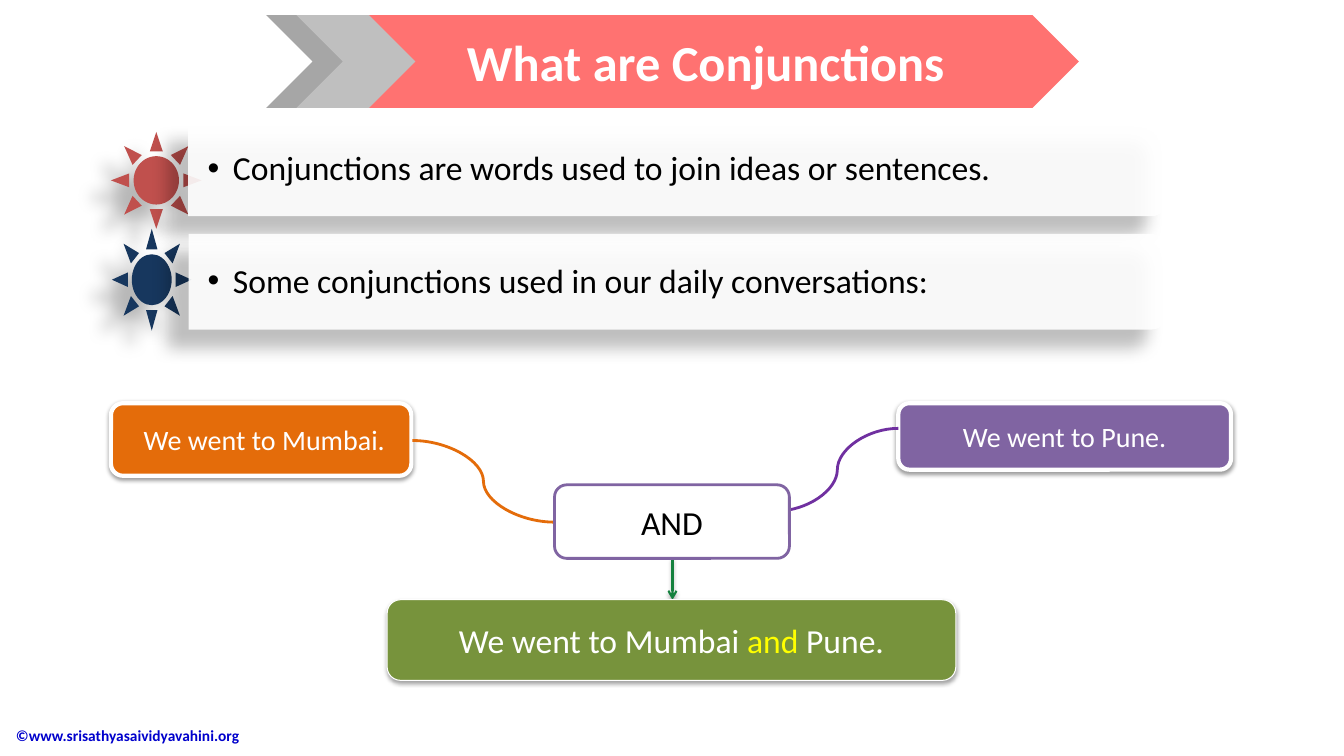
"""Build a slide explaining conjunctions with a joined-sentence diagram."""
from lxml import etree
from pptx import Presentation
from pptx.dml.color import RGBColor
from pptx.enum.shapes import MSO_CONNECTOR, MSO_SHAPE
from pptx.enum.text import MSO_ANCHOR, PP_ALIGN
from pptx.oxml.ns import qn
from pptx.util import Inches, Pt

ROUNDED = MSO_SHAPE.ROUNDED_RECTANGLE
PANEL = MSO_SHAPE.ROUND_2_SAME_RECTANGLE
SUN = MSO_SHAPE.SUN
CHEVRON = MSO_SHAPE.CHEVRON
PENTAGON = MSO_SHAPE.PENTAGON
CURVE = MSO_CONNECTOR.CURVE
STRAIGHT = MSO_CONNECTOR.STRAIGHT
CENTER = PP_ALIGN.CENTER
LEFT = PP_ALIGN.LEFT
MIDDLE = MSO_ANCHOR.MIDDLE

FONT = "Calibri"
COLORS = {
    "white": "FFFFFF", "black": "000000", "yellow": "FFFF00", "link": "0000CC",
    "orange": "E46C0A", "purple": "8064A2", "violet": "7030A0",
    "green": "77933C", "arrow": "15813E", "red": "C0504D", "navy": "17375E",
    "dark_gray": "A6A6A6", "light_gray": "BFBFBF", "coral": "FF7271",
}
CARD_SHADOW = (38, 3.1, 1.6, 90)
RESULT_SHADOW = (35, 3.1, 1.8, 90)
DEEP_SHADOW = (28, 11.8, 19.7, 141)


def rgb(name):
    """Return the named colour."""
    return RGBColor.from_string(COLORS[name])


def set_alpha(color_element, percent):
    """Give a colour element an opacity."""
    etree.SubElement(color_element, qn("a:alpha"), val=str(percent * 1000))


def add_shadow(effects, shadow):
    """Add an outer shadow of opacity, blur, distance and angle."""
    opacity, blur, distance, angle = shadow
    outer = etree.SubElement(
        effects, qn("a:outerShdw"), blurRad=str(int(Pt(blur))),
        dist=str(int(Pt(distance))), dir=str(angle * 60000), rotWithShape="0")
    color = etree.SubElement(outer, qn("a:srgbClr"), val=COLORS["black"])
    set_alpha(color, opacity)


def write_text(shape, text, size=24, color="black", bold=False, align=CENTER,
               bullet=False, highlight=None):
    """Write one paragraph, colouring the highlighted word if given."""
    frame = shape.text_frame
    frame.word_wrap = True
    frame.vertical_anchor = MIDDLE
    paragraph = frame.paragraphs[0]
    paragraph.alignment = align
    if bullet:
        frame.margin_left = Inches(0.19)
        frame.margin_right = frame.margin_top = frame.margin_bottom = Inches(0.02)
        paragraph.line_spacing = 0.9
        paragraph.space_after = Pt(3.6)
        properties = paragraph._p.get_or_add_pPr()
        properties.set("marL", str(Inches(0.25)))
        properties.set("indent", str(-Inches(0.25)))
        etree.SubElement(properties, qn("a:buFont"), typeface="Arial")
        etree.SubElement(properties, qn("a:buChar"), char="•")
    paragraph.font.size = Pt(size)
    pieces = [text]
    if highlight:
        before, word, after = text.partition(highlight)
        pieces = [before, word, after]
    for piece in pieces:
        run = paragraph.add_run()
        run.text = piece
        run.font.name = FONT
        run.font.size = Pt(size)
        run.font.bold = bold
        run.font.color.rgb = rgb("yellow" if piece == highlight else color)


def add_block(slide, kind, box, fill, line=None, line_width=0, shadow=None,
              rotation=0, opacity=None):
    """Add a filled preset shape."""
    shape = slide.shapes.add_shape(kind, *map(Inches, box))
    shape.shadow.inherit = False
    shape.rotation = rotation
    shape.fill.solid()
    shape.fill.fore_color.rgb = rgb(fill)
    properties = shape._element.spPr
    if opacity:
        set_alpha(properties.find(qn("a:solidFill"))[0], opacity)
    if line:
        shape.line.color.rgb = rgb(line)
        shape.line.width = Pt(line_width)
    else:
        shape.line.fill.background()
    if shadow:
        add_shadow(properties.find(qn("a:effectLst")), shadow)
    return shape


def add_link(slide, kind, start, end, color, width, arrow=False, shadow=None):
    """Add a connector, with an optional arrowhead and shadow."""
    link = slide.shapes.add_connector(kind, *map(Inches, start + end))
    link.line.color.rgb = rgb(color)
    link.line.width = Pt(width)
    if arrow:
        etree.SubElement(link.line._get_or_add_ln(), qn("a:tailEnd"), type="arrow")
    effects = etree.SubElement(link._element.spPr, qn("a:effectLst"))
    if shadow:
        add_shadow(effects, shadow)


def add_text(slide, box, text, **text_format):
    """Add a text box."""
    write_text(slide.shapes.add_textbox(*map(Inches, box)), text, **text_format)


def add_point(slide, sun_box, sun_color, panel_box, text_box, text):
    """Add a sun marker with its panel and bulleted sentence."""
    add_block(slide, SUN, sun_box, sun_color, shadow=DEEP_SHADOW, rotation=90)
    add_block(slide, PANEL, panel_box, "white", shadow=DEEP_SHADOW,
              rotation=90, opacity=90)
    add_text(slide, text_box, text, align=LEFT, bullet=True)


def add_sentence(slide, box, fill, text, size=20, line_width=3,
                 shadow=CARD_SHADOW, highlight=None):
    """Add a rounded card holding a sentence."""
    card = add_block(slide, ROUNDED, box, fill, "white", line_width, shadow)
    write_text(card, text, size=size, color="white", highlight=highlight)


def add_diagram(slide):
    """Add two sentences joined by a conjunction into one."""
    add_sentence(slide, (1.1, 4, 2.98, 0.72), "orange", " We went to Mumbai.")
    add_link(slide, CURVE, (4.09, 4.37), (5.5, 5.18), "orange", 2)
    add_sentence(slide, (8.91, 4, 3.3, 0.66), "purple", "We went to Pune.")
    add_link(slide, CURVE, (7.7, 5.07), (8.91, 4.25), "violet", 2)
    add_link(slide, STRAIGHT, (6.67, 5.54), (6.67, 5.95), "arrow", 1.5,
             arrow=True, shadow=RESULT_SHADOW)
    add_sentence(slide, (3.84, 5.95, 5.64, 0.8), "green",
                 "We went to Mumbai and Pune.", size=24, line_width=0.75,
                 shadow=RESULT_SHADOW, highlight="and ")
    conjunction = add_block(slide, ROUNDED, (5.5, 4.81, 2.33, 0.73), "white",
                            "purple", 2)
    write_text(conjunction, "AND")


def add_title(slide):
    """Add the title banner with its two chevrons."""
    add_block(slide, CHEVRON, (2.64, 0.15, 1.18, 0.92), "dark_gray")
    banner = add_block(slide, PENTAGON, (3.53, 0.15, 7.17, 0.92), "coral")
    write_text(banner, "What are Conjunctions", size=36, color="white", bold=True)
    add_block(slide, CHEVRON, (2.94, 0.15, 1.18, 0.92), "light_gray")


def main():
    """Build and save the slide."""
    presentation = Presentation()
    presentation.slide_width = Inches(13.33)
    presentation.slide_height = Inches(7.5)
    slide = presentation.slides.add_slide(presentation.slide_layouts[6])
    add_text(slide, (0.06, 7.1, 3.53, 0.4), "©www.srisathyasaividyavahini.org",
             size=11, color="link", bold=True, align=LEFT)
    add_diagram(slide)
    add_point(slide, (1.07, 1.34, 0.96, 0.9), "red", (6.26, -3.17, 0.92, 9.71),
              (1.87, 1.27, 9.67, 0.83),
              "Conjunctions are words used to join ideas or sentences.")
    add_point(slide, (1, 2.38, 1.01, 0.79), "navy", (6.25, -2.06, 0.95, 9.71),
              (1.87, 2.37, 9.67, 0.86),
              "Some conjunctions used in our daily conversations:")
    add_title(slide)
    presentation.save("out.pptx")


if __name__ == "__main__":
    main()
